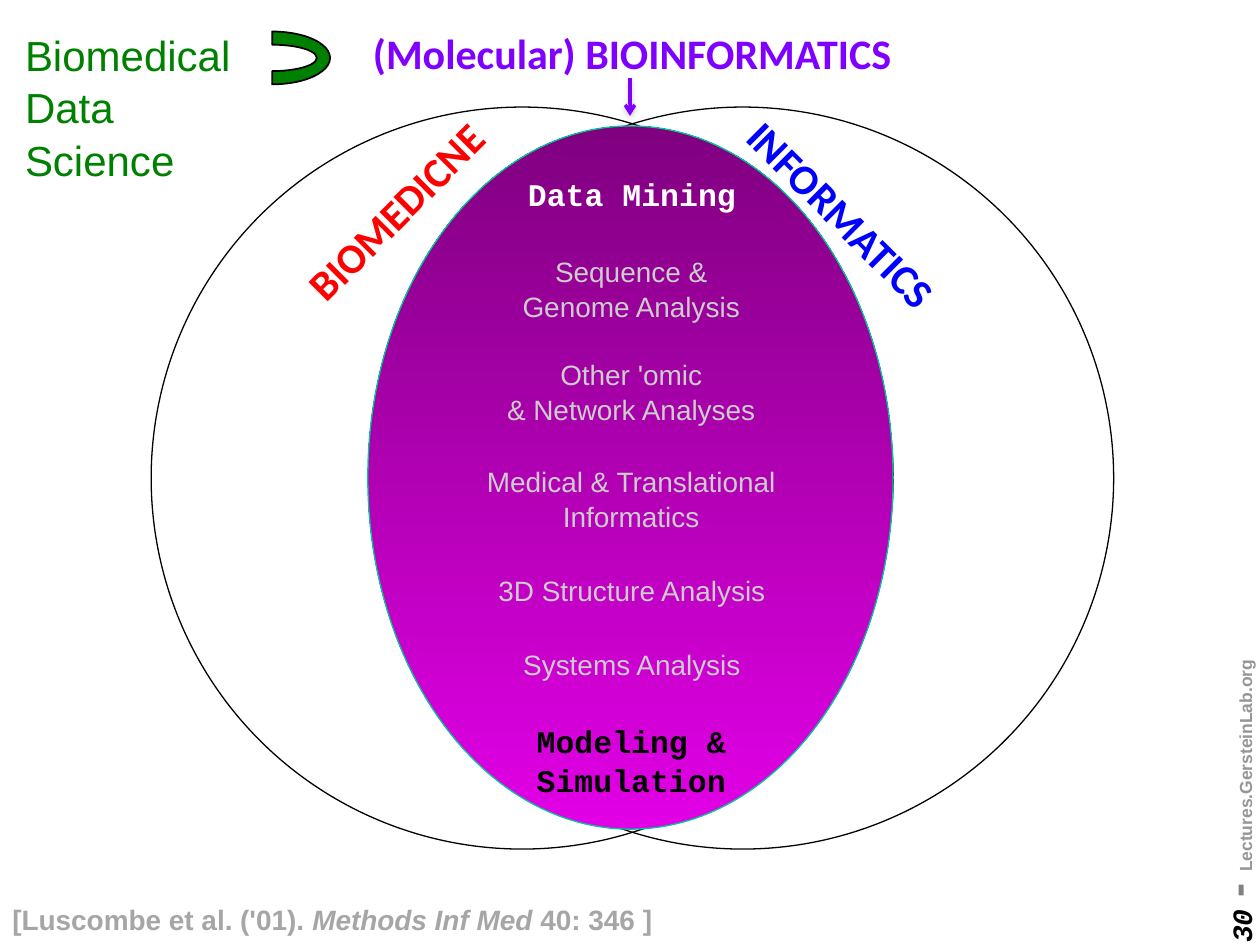
from lxml.etree import SubElement
from pptx import Presentation
from pptx.dml.color import RGBColor
from pptx.enum.shapes import MSO_CONNECTOR, MSO_SHAPE
from pptx.enum.text import MSO_ANCHOR, MSO_AUTO_SIZE as FIT, PP_ALIGN
from pptx.oxml.ns import qn
from pptx.util import Pt

LABEL = dict(name="Calibri", size=24, bold=True)
METHOD = dict(name="Courier New", size=18, bold=True)
TOPIC = dict(name="Arial", size=16, color="CCCCCC")
CITATION = dict(name="Arial", size=16, bold=True, color="A6A6A6")
FOOTER = dict(name="Arial", bold=True)
TOPICS = [
    (["Sequence &", "Genome Analysis", "Other 'omic", "& Network Analyses"],
     (281.5, 141.1, 158.4, 104.4)),
    (["Medical & Translational", "Informatics"], (270, 261.4, 181.4, 46.1)),
    (["3D Structure Analysis"], (276.5, 323.3, 169.2, 26.6)),
    (["Systems Analysis"], (290.9, 365.8, 140.4, 26.6)),
]


def rgb(code):
    return RGBColor.from_string(code)


def points(values):
    return [Pt(v) for v in values]


def add_run(p, text, fmt):
    r = p.add_run()
    r.text = text
    for key, value in fmt.items():
        if key == "color":
            r.font.color.rgb = rgb(value)
        else:
            setattr(r.font, key, Pt(value) if key == "size" else value)


def fill_text(tf, lines, align, wrap, fit):
    frame = dict(word_wrap=wrap, auto_size=fit, vertical_anchor=MSO_ANCHOR.TOP)
    for key, value in frame.items():
        setattr(tf, key, value)
    for i, runs in enumerate(lines):
        p = tf.add_paragraph() if i else tf.paragraphs[0]
        p.alignment = align
        p.line_spacing = 1 if runs[0][1]["name"] == "Calibri" else 1.04
        for text, fmt in runs:
            add_run(p, text, fmt)


def add_text(s, lines, box, align=PP_ALIGN.LEFT, rotation=0, wrap=False,
             fit=FIT.SHAPE_TO_FIT_TEXT):
    sp = s.shapes.add_textbox(*points(box))
    fill_text(sp.text_frame, lines, align, wrap, fit)
    sp.rotation = rotation
    return sp


def add_centered(s, texts, box, fmt):
    return add_text(s, [[(t, fmt)] for t in texts], box, PP_ALIGN.CENTER)


def add_title(s, text, box, fmt):
    sp = s.shapes.title
    sp.left, sp.top, sp.width, sp.height = points(box)
    fill_text(sp.text_frame, [[(text, fmt)]], PP_ALIGN.LEFT, False, FIT.NONE)


def add_outline(s, kind, box, line, weight=0.75):
    sp = s.shapes.add_shape(kind, *points(box))
    sp.shadow.inherit = False
    sp.fill.background()
    sp.line.color.rgb = rgb(line)
    sp.line.width = Pt(weight)
    return sp


def add_overlap(s, box):
    sp = add_outline(s, MSO_SHAPE.OVAL, box, "00C896")
    sp.fill.gradient()
    sp.fill.gradient_angle = 90
    for stop, code in zip(sp.fill.gradient_stops, ("E200E6", "800080")):
        stop.color.rgb = rgb(code)


def add_arrow(s, ends, color):
    cxn = s.shapes.add_connector(MSO_CONNECTOR.STRAIGHT, *points(ends))
    cxn.line.color.rgb = rgb(color)
    cxn.line.width = Pt(2)
    SubElement(cxn.line._get_or_add_ln(), qn("a:tailEnd"), type="arrow")
    effects = SubElement(cxn._element.spPr, qn("a:effectLst"))
    shadow = SubElement(effects, qn("a:outerShdw"), blurRad=str(Pt(3.1)),
                        dist=str(Pt(1.6)), dir="5400000", rotWithShape="0")
    tint = SubElement(shadow, qn("a:srgbClr"), val="808080")
    SubElement(tint, qn("a:alpha"), val="38000")


def main():
    prs = Presentation()
    prs.slide_width, prs.slide_height = Pt(720), Pt(540)
    s = prs.slides.add_slide(prs.slide_layouts[5])

    add_title(s, "(Molecular) BIOINFORMATICS", (205.9, 12.2, 316.1, 36.7),
              dict(LABEL, color="8000FF"))
    add_text(s, [[("30", dict(FOOTER, name="Courier New", size=16, italic=True,
                              color="000000")),
                  (" - ", dict(FOOTER, size=24, color="808080")),
                  ("Lectures.GersteinLab.org",
                   dict(FOOTER, size=10, color="969696"))]],
             (576, 414, 242.6, 20.9), rotation=270, wrap=True, fit=FIT.NONE)

    for left in (86.4, 212.4):
        add_outline(s, MSO_SHAPE.OVAL, (left, 61.2, 424, 424), "000000")
    for text, color, rotation, box in (
            ("BIOMEDICNE", "FF0000", 315, (153.4, 102.2, 146.2, 36)),
            ("INFORMATICS", "0000FF", 45, (403.9, 105.8, 157, 36))):
        add_text(s, [[(text, dict(LABEL, color=color))]], box,
                 rotation=rotation)

    add_overlap(s, (210.2, 72, 300.2, 401.8))
    add_centered(s, ["Data Mining"], (293.8, 95.8, 134.6, 28.8),
                 dict(METHOD, color="FFFFFF"))
    add_centered(s, ["Modeling &", "Simulation"], (298.8, 408.2, 123.8, 51.1),
                 dict(METHOD, color="000000"))
    topics = [add_centered(s, texts, box, TOPIC) for texts, box in TOPICS]
    topics[0].text_frame.paragraphs[2].space_before = Pt(19.2)

    add_arrow(s, (360, 44.6, 360, 66.2), "8000FF")
    add_text(s, [[("[Luscombe et al. ('01). ", CITATION),
                  ("Methods Inf Med", dict(CITATION, italic=True)),
                  (" 40: 346 ]", CITATION)]], (0, 511.2, 384.5, 26.6))
    add_text(s, [[("Biomedical Data Science",
                   dict(name="Arial", size=24, color="008000"))]],
             (7.2, 12.2, 133.2, 94.3), wrap=True)
    subset = add_outline(s, MSO_SHAPE.BLOCK_ARC, (140.4, 0, 30.2, 66.2),
                         "000000", 1)
    subset.fill.solid()
    subset.fill.fore_color.rgb = rgb("008000")
    subset.rotation = 90

    prs.save("out.pptx")


if __name__ == "__main__":
    main()
